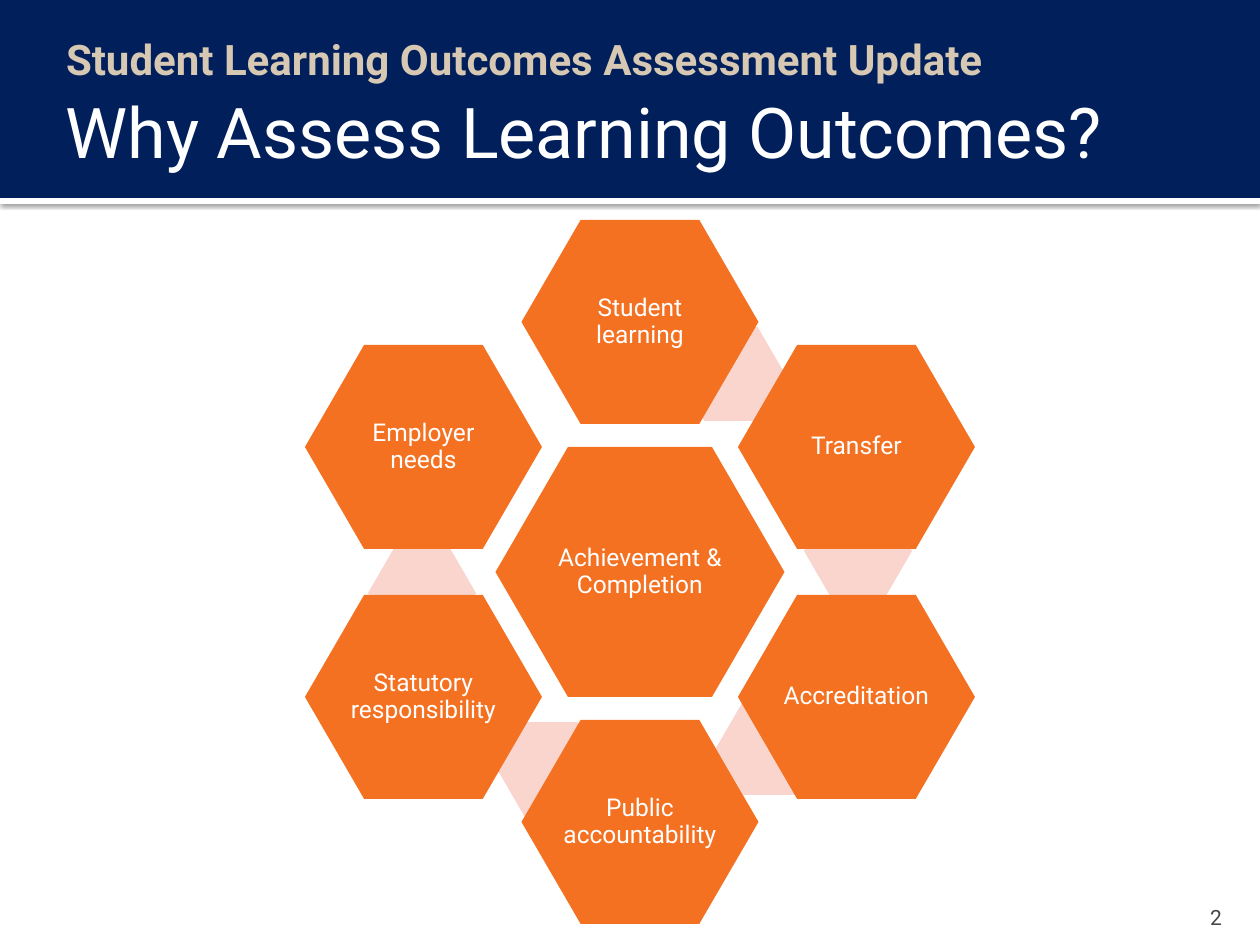
from math import cos, radians, sin
from lxml import etree
from pptx import Presentation
from pptx.dml.color import RGBColor
from pptx.enum.shapes import MSO_SHAPE as Shape
from pptx.enum.text import MSO_ANCHOR as Anchor, PP_ALIGN as Align
from pptx.oxml.ns import qn
from pptx.util import Pt

# Content
TITLE = "Why Assess Learning Outcomes?"
TOPIC = "Student Learning Outcomes Assessment Update"
PAGE = "2"
CORE = "Achievement & Completion"
RING = ["Student learning", "Transfer", "Accreditation",
        "Public accountability", "Statutory responsibility", "Employer needs"]

# Geometry in px, 126 to the inch
WIDE, HIGH = 1260, 945
BAND, STRIP = 198, 6
MID, REACH = (640, 572), 250
CORE_SIZE, NODE_SIZE, LINK_SIZE = (289, 250), (237, 204), (108, 94)
LINKS = [(731, 374), (858, 551), (770, 748), (551, 769), (422, 593)]

THEME = {
    "font": "Roboto",
    "navy": "001F5B", "white": "FFFFFF", "sand": "D6C8B2",
    "orange": "F37121", "pink": "FAD5CD", "grey": "454545",
    "title": 40, "topic": 24, "node": 14, "page": 12,
}


def px(n):
    return round(n * 914400 / 126)


def color(name):
    return RGBColor.from_string(THEME[name])


def write(shape, text, size, tint, align=Align.LEFT, anchor=Anchor.TOP,
          pads=(0, 0, 0, 0), bold=False):
    frame = shape.text_frame
    frame.word_wrap = True
    frame.vertical_anchor = anchor
    (frame.margin_left, frame.margin_top,
     frame.margin_right, frame.margin_bottom) = map(px, pads)
    para = frame.paragraphs[0]
    para.alignment = align
    run = para.add_run()
    run.text = text
    run.font.name = THEME["font"]
    run.font.size = Pt(THEME[size])
    run.font.bold = bold
    run.font.color.rgb = color(tint)
    return para


def draw(kind, box, tint):
    shape = slide.shapes.add_shape(kind, *map(px, box))
    shape.shadow.inherit = False
    shape.fill.solid()
    shape.fill.fore_color.rgb = color(tint)
    shape.line.fill.background()
    return shape


def hexagon(mid, size, tint, text=None):
    (x, y), (w, h) = mid, size
    shape = draw(Shape.HEXAGON, (x - w / 2, y - h / 2, w, h), tint)
    shape.adjustments[0] = 0.29
    if text:
        para = write(shape, text, "node", "white", Align.CENTER, Anchor.MIDDLE)
        para.line_spacing = 0.9


def shade(shape):
    effects = shape._element.spPr.find(qn("a:effectLst"))
    outer = etree.SubElement(effects, qn("a:outerShdw"), blurRad=str(Pt(2.5)),
                             dist=str(Pt(0.8)), dir="5400000", rotWithShape="0")
    black = etree.SubElement(outer, qn("a:srgbClr"), val="000000")
    etree.SubElement(black, qn("a:alpha"), val="60000")


deck = Presentation()
deck.slide_width, deck.slide_height = px(WIDE), px(HIGH)
slide = deck.slides.add_slide(deck.slide_layouts[5])

# Header band with a shadowed strip below
shade(draw(Shape.RECTANGLE, (0, BAND, WIDE, STRIP), "white"))
draw(Shape.RECTANGLE, (0, 0, WIDE, BAND), "navy")

# Links, then core and ring of hexagons
for spot in LINKS:
    hexagon(spot, LINK_SIZE, "pink")
hexagon(MID, CORE_SIZE, "orange", CORE)
for i, name in enumerate(RING):
    turn = radians(360 / len(RING) * i - 90)
    spot = MID[0] + REACH * cos(turn), MID[1] + REACH * sin(turn)
    hexagon(spot, NODE_SIZE, "orange", name)

# Topic line and page number
topic = slide.shapes.add_textbox(*map(px, (42, 21, 1177, 63)))
write(topic, TOPIC, "topic", "sand", pads=(24, 13, 13, 6), bold=True)
page = slide.shapes.add_textbox(*map(px, (1134, 892, 101, 38)))
write(page, PAGE, "page", "grey", Align.RIGHT, Anchor.BOTTOM, (13, 6, 13, 0))

# Title, brought in front of the band
title = slide.shapes.title
title.left, title.top, title.width, title.height = map(px, (53, 73, 1155, 116))
write(title, TITLE, "title", "white", anchor=Anchor.MIDDLE, pads=(13, 6, 6, 6))
slide.shapes._spTree.append(title._element)

deck.save("out.pptx")
